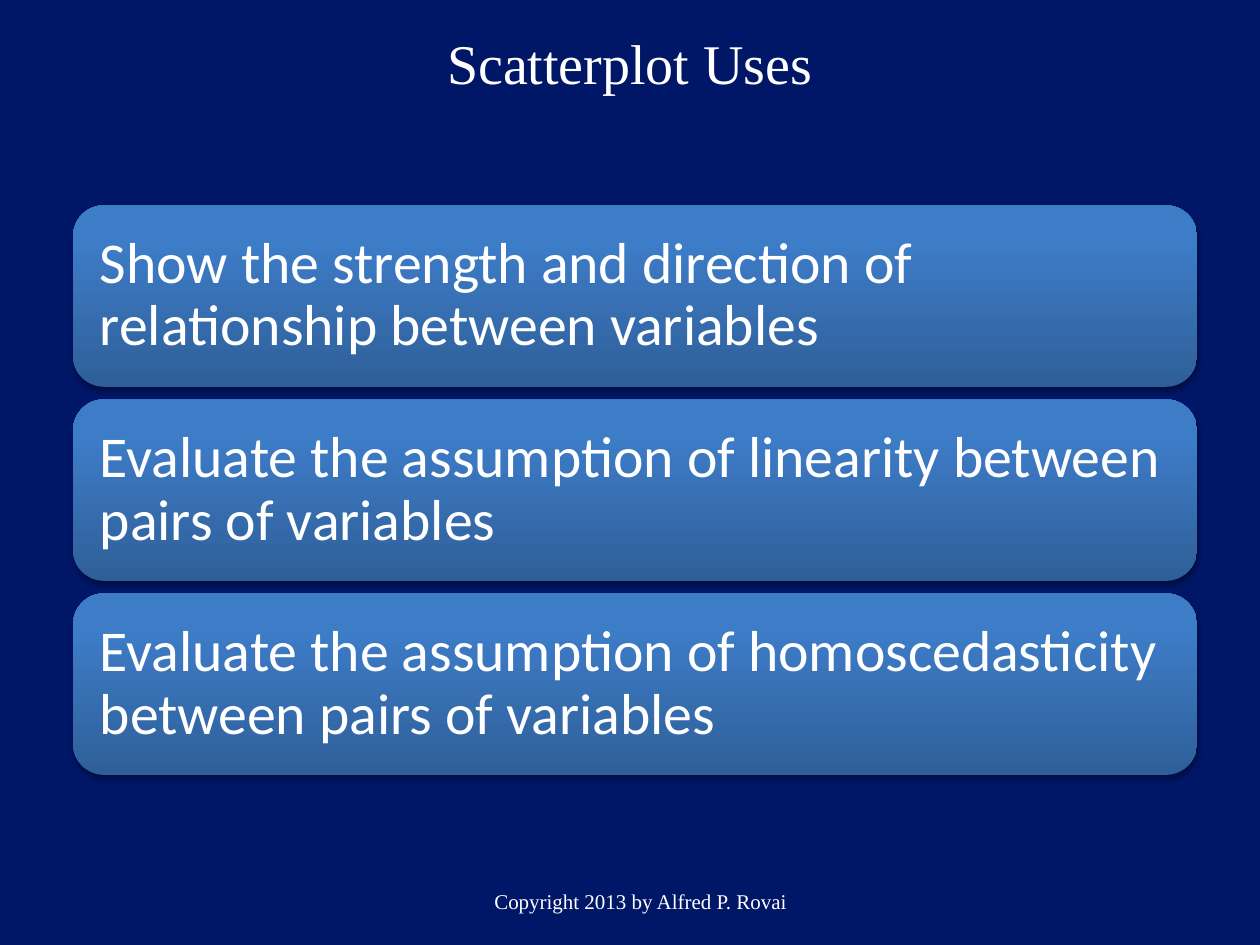
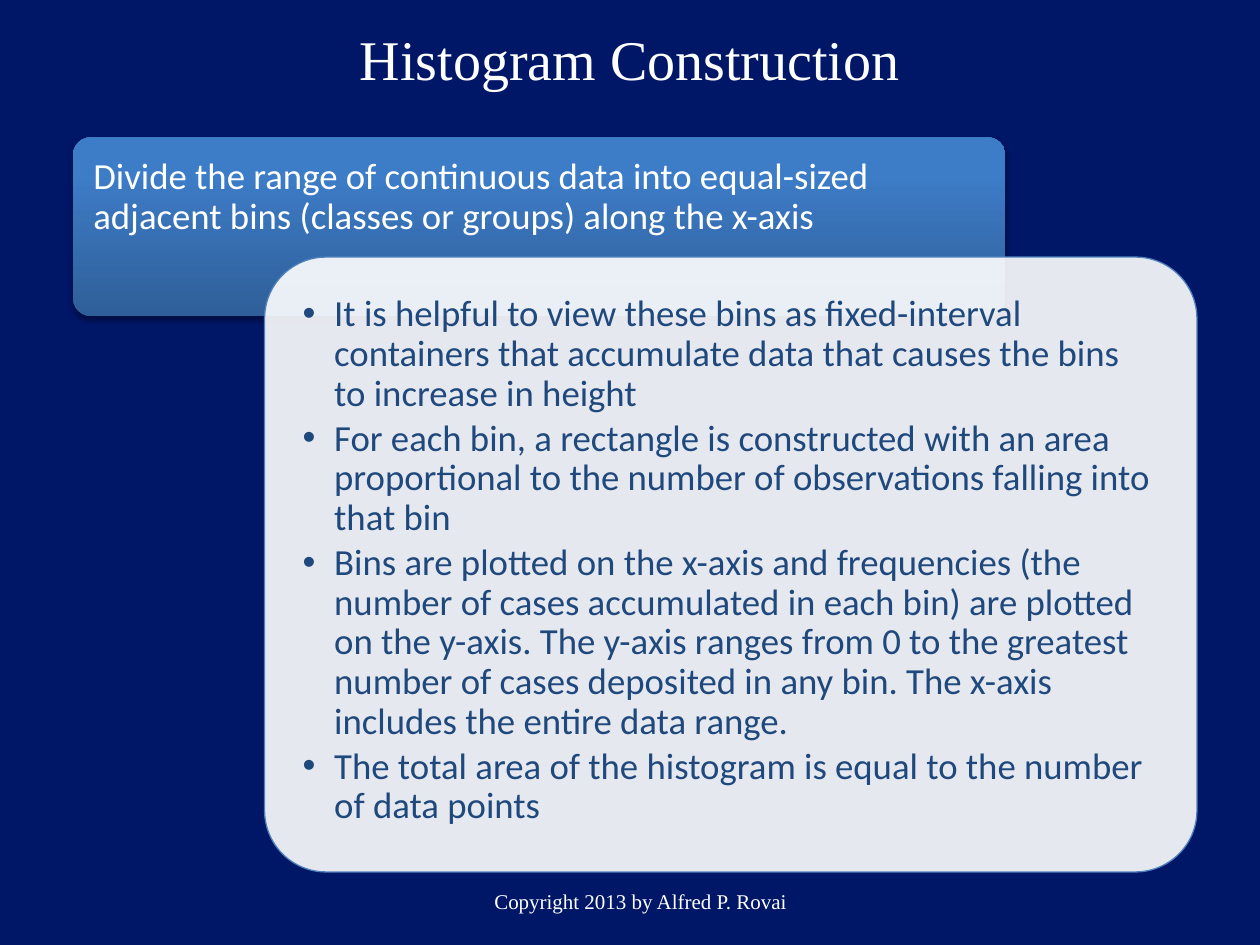
from lxml.etree import SubElement as Sub
from pptx import Presentation
from pptx.dml.color import RGBColor as Rgb
from pptx.enum.shapes import MSO_SHAPE as Shape
from pptx.enum.text import MSO_ANCHOR as Anchor, PP_ALIGN as Align
from pptx.oxml.ns import qn
from pptx.util import Inches, Pt

USES = (
    "Scatterplot Uses",
    [
        "Show the strength and direction of relationship between variables",
        "Evaluate the assumption of linearity between pairs of variables",
        "Evaluate the assumption of homoscedasticity between pairs of variables",
    ],
)
BINS = (
    "Histogram Construction",
    "Divide the range of continuous data into equal-sized adjacent bins "
    "(classes or groups) along the x-axis",
    [
        "It is helpful to view these bins as fixed-interval containers that "
        "accumulate data that causes the bins to increase in height",
        "For each bin, a rectangle is constructed with an area proportional to "
        "the number of observations falling into that bin",
        "Bins are plotted on the x-axis and frequencies (the number of cases "
        "accumulated in each bin) are plotted on the y-axis. The y-axis ranges "
        "from 0 to the greatest number of cases deposited in any bin. The x-axis "
        "includes the entire data range.",
        "The total area of the histogram is equal to the number of data points",
    ],
)
FOOTER = "Copyright 2013 by Alfred P. Rovai"

NAVY = Rgb(0x00, 0x16, 0x67)
WHITE = Rgb(0xFF, 0xFF, 0xFF)
DEEP = Rgb(0x2F, 0x5F, 0x99)
BRIGHT = Rgb(0x3D, 0x7C, 0xC7)
EDGE = Rgb(0x4F, 0x81, 0xBD)
INK = Rgb(0x1F, 0x49, 0x7D)
SERIF, SANS = "Times New Roman", "Calibri"

LEFT, WIDE = 0.58, 8.92
BAR_TOP, BAR_HIGH, BAR_STEP = 1.63, 1.44, 1.54
CARD_WIDE = 7.4
HEAD_TOP, CARD_TOP = 1.09, 2.04


def style(par, face, size, color, align):
    par.alignment = align
    font = par.font
    font.name, font.size, font.color.rgb = face, Pt(size), color


def write(frame, lines, face, size, color, align=Align.LEFT, anchor=Anchor.MIDDLE):
    frame.word_wrap = True
    frame.vertical_anchor = anchor
    frame.text = "\n".join(lines)
    for par in frame.paragraphs:
        style(par, face, size, color, align)


def add_page(deck, title, top, high):
    page = deck.slides.add_slide(deck.slide_layouts[5])
    head = page.shapes.title
    head.left, head.top = Inches(0.5), Inches(top)
    head.width, head.height = Inches(9), Inches(high)
    write(head.text_frame, [title], SERIF, 32, WHITE, Align.CENTER)
    foot = page.shapes.add_textbox(Inches(1.75), Inches(6.95), Inches(6.67), Inches(0.4))
    write(foot.text_frame, [FOOTER], SERIF, 12, WHITE, Align.CENTER)
    return page


def add_card(page, box, lines, size, color, pad, anchor, round_by):
    card = page.shapes.add_shape(Shape.ROUNDED_RECTANGLE, *map(Inches, box))
    card.adjustments[0] = round_by
    card.shadow.inherit = False
    frame = card.text_frame
    frame.margin_left = frame.margin_right = Inches(pad)
    frame.margin_top = frame.margin_bottom = Inches(pad)
    write(frame, lines, SANS, size, color, anchor=anchor)
    for par in frame.paragraphs:
        par.line_spacing = 0.9
    return card


def paint_blue(card):
    card.line.fill.background()
    card.fill.gradient()
    card.fill.gradient_angle = 90
    low, high = card.fill.gradient_stops
    low.color.rgb, high.color.rgb = DEEP, BRIGHT
    low.position, high.position = 0, 0.8
    glow = Sub(card.element.spPr.find(qn("a:effectLst")), qn("a:outerShdw"),
               blurRad=str(Pt(3.1)), dist=str(Pt(1.8)), dir="5400000", rotWithShape="0")
    tint = Sub(glow, qn("a:srgbClr"), val="000000")
    Sub(tint, qn("a:alpha"), val="35000")


def paint_pale(card):
    card.fill.solid()
    card.fill.fore_color.rgb = WHITE
    tint = card.element.spPr.find(qn("a:solidFill")).find(qn("a:srgbClr"))
    Sub(tint, qn("a:alpha"), val="90000")
    card.line.color.rgb, card.line.width = EDGE, Pt(0.75)


def add_dots(card):
    for par in card.text_frame.paragraphs:
        par.space_after = Pt(3)
        props = par._p.get_or_add_pPr()
        props.set("marL", str(Inches(0.25)))
        props.set("indent", str(Inches(-0.25)))
        Sub(props, qn("a:buFont"), typeface="Arial")
        Sub(props, qn("a:buChar"), char="•")
        props.append(props.find(qn("a:defRPr")))


def draw_uses(deck):
    title, uses = USES
    page = add_page(deck, title, 0.08, 0.83)
    for row, use in enumerate(uses):
        box = LEFT, BAR_TOP + row * BAR_STEP, WIDE, BAR_HIGH
        paint_blue(add_card(page, box, [use], 33, WHITE, 0.14, Anchor.MIDDLE, 0.17))


def draw_bins(deck):
    title, head, notes = BINS
    page = add_page(deck, title, 0, 0.92)
    box = LEFT, HEAD_TOP, CARD_WIDE, 1.42
    paint_blue(add_card(page, box, [head], 21, WHITE, 0.12, Anchor.TOP, 0.1))
    box = LEFT + WIDE - CARD_WIDE, CARD_TOP, CARD_WIDE, 4.88
    card = add_card(page, box, notes, 21, INK, 0.16, Anchor.TOP, 0.1)
    paint_pale(card)
    add_dots(card)


def main():
    """Build the two statistics slides."""
    deck = Presentation()
    deck.slide_width, deck.slide_height = Inches(10), Inches(7.5)
    back = deck.slide_master.background.fill
    back.solid()
    back.fore_color.rgb = NAVY
    draw_uses(deck)
    draw_bins(deck)
    deck.save("out.pptx")


if __name__ == "__main__":
    main()
